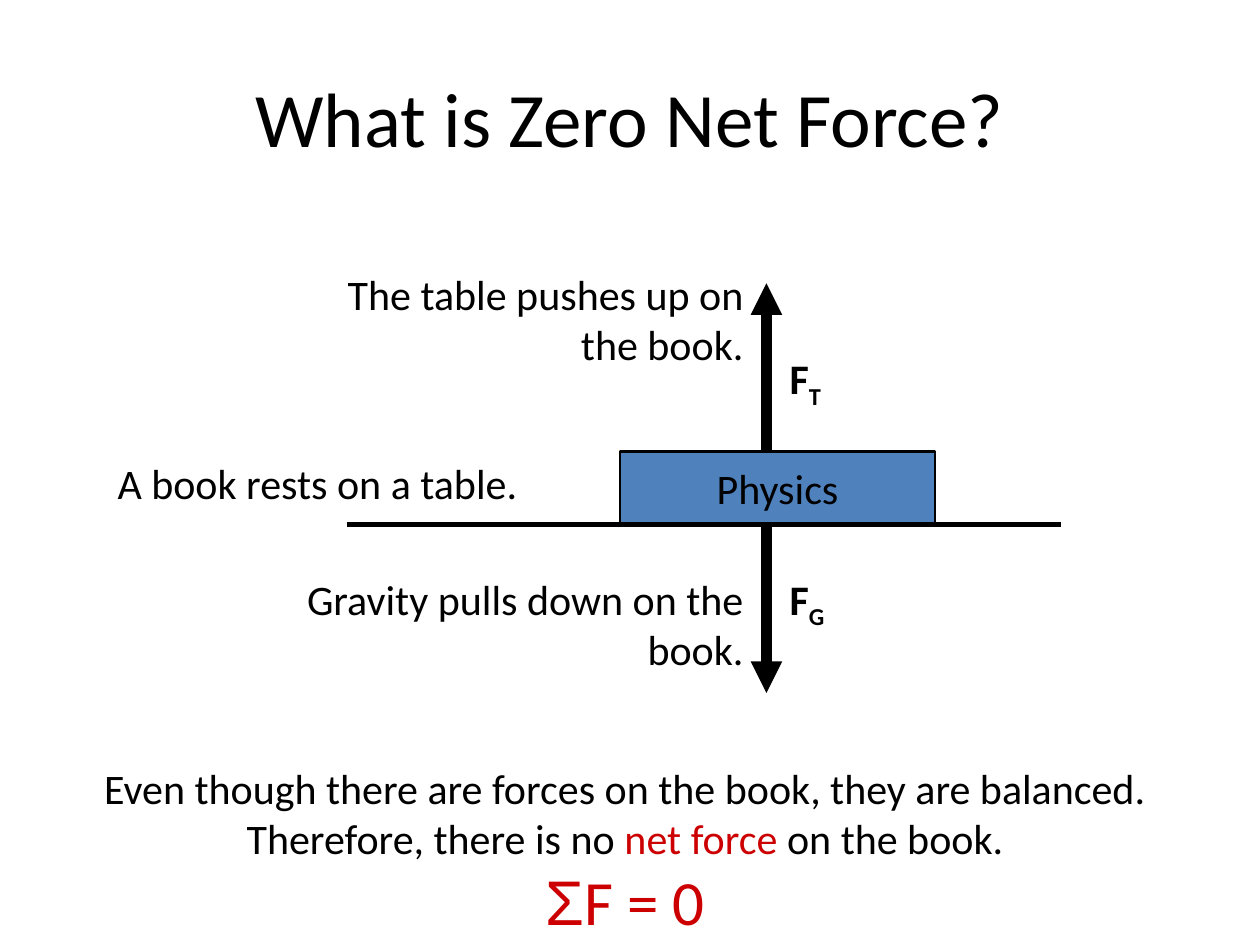
from lxml.etree import SubElement
from pptx import Presentation
from pptx.dml.color import RGBColor
from pptx.enum.shapes import MSO_CONNECTOR, MSO_SHAPE
from pptx.enum.text import MSO_ANCHOR, MSO_AUTO_SIZE, PP_ALIGN
from pptx.oxml.ns import qn
from pptx.util import Cm, Pt

BLACK = RGBColor(0, 0, 0)
RED = RGBColor(0xCC, 0, 0)
BLUE = RGBColor(0x4F, 0x81, 0xBD)
WHITE = RGBColor(255, 255, 255)


def add_run(para, text, size=24, color=BLACK, face="Calibri", bold=False):
    """Add one styled run to a paragraph and return it."""
    run = para.add_run()
    run.text = text
    font = run.font
    font.name, font.size, font.bold = face, Pt(size), bold
    font.color.rgb = color
    return run


def add_text(shapes, box, align=PP_ALIGN.LEFT, wrap=True):
    """Add a growing text box and return its first paragraph and frame."""
    frame = shapes.add_textbox(*map(Cm, box)).text_frame
    frame.word_wrap = wrap
    frame.auto_size = MSO_AUTO_SIZE.SHAPE_TO_FIT_TEXT
    para = frame.paragraphs[0]
    para.alignment = align
    return para, frame


def add_line(shapes, start, end, width, head=False):
    """Draw a straight black line, with an arrowhead at its end if asked."""
    line = shapes.add_connector(MSO_CONNECTOR.STRAIGHT, *map(Cm, start + end))
    line.line.color.rgb = BLACK
    line.line.width = Pt(width)
    if head:
        SubElement(line.line._get_or_add_ln(), qn("a:tailEnd"), type="triangle")
    SubElement(line._element.spPr, qn("a:effectLst"))


def add_title(shapes, box):
    """Place the slide title in the middle of its box."""
    para, frame = add_text(shapes, box, PP_ALIGN.CENTER)
    frame.auto_size = MSO_AUTO_SIZE.NONE
    frame.vertical_anchor = MSO_ANCHOR.MIDDLE
    add_run(para, "What is Zero Net Force?", 44)


def add_scene(shapes, box):
    """Place the book on the table, with its caption to the left."""
    x, y, w, h = box
    book = shapes.add_shape(
        MSO_SHAPE.RECTANGLE, Cm(x + 10.38), Cm(y), Cm(6.35), Cm(h))
    book.shadow.inherit = False
    book.fill.solid()
    book.fill.fore_color.rgb = BLUE
    book.line.color.rgb = BLACK
    book.line.width = Pt(1.5)
    frame = book.text_frame
    frame.word_wrap = False
    frame.vertical_anchor = MSO_ANCHOR.MIDDLE
    frame.paragraphs[0].alignment = PP_ALIGN.CENTER
    add_run(frame.paragraphs[0], "Physics")
    add_line(shapes, (x + 4.87, y + h), (x + w, y + h), 3)
    para, _ = add_text(shapes, (x, y, 9.88, 1.27), wrap=False)
    add_run(para, "A book rests on a table.")


def add_force(shapes, box, ends, note, note_y, sign, sign_y):
    """Place one force: its arrow, its note and its symbol."""
    x, y, w, h = box
    group = shapes.add_group_shape().shapes
    mid = x + 9.53
    start, end = ends
    add_line(group, (mid, y + start), (mid, y + end), 6, True)
    para, _ = add_text(group, (x, y + note_y, 9.32, 2.29), PP_ALIGN.RIGHT)
    add_run(para, note)
    para, _ = add_text(group, (x + 9.75, y + sign_y, w - 9.75, 1.27), wrap=False)
    add_run(para, "F", bold=True)
    sub = add_run(para, sign, bold=True)
    sub.font._element.set("baseline", "-25000")


def add_summary(shapes, box):
    """Place the closing statement and the formula."""
    para, frame = add_text(shapes, box, PP_ALIGN.CENTER)
    add_run(para, "Even though there are forces on the book, they are balanced.")
    para = frame.add_paragraph()
    para.alignment = PP_ALIGN.CENTER
    add_run(para, "Therefore, there is no ")
    add_run(para, "net force", color=RED)
    add_run(para, " on the book.")
    para = frame.add_paragraph()
    para.alignment = PP_ALIGN.CENTER
    add_run(para, "Σ", 36, RED, "Arial")
    add_run(para, "F = 0", 36, RED)


def main():
    """Build the slide and save it."""
    deck = Presentation()
    deck.slide_width, deck.slide_height = Cm(25.4), Cm(19.05)
    slide = deck.slides.add_slide(deck.slide_layouts[6])
    slide.background.fill.solid()
    slide.background.fill.fore_color.rgb = WHITE
    shapes = slide.shapes
    add_title(shapes, (1.27, 0.76, 22.86, 3.18))
    add_summary(shapes, (0, 15.24, 25.2, 3.81))
    add_scene(shapes, (2.12, 9.1, 19.26, 1.48))
    add_force(shapes, (5.92, 10.58, 11.17, 3.39), (0, 3.39),
              "Gravity pulls down on the book.", 0.85, "G", 0.85)
    add_force(shapes, (5.92, 5.29, 11.17, 3.81), (3.81, 0.42),
              "The table pushes up on the book.", 0, "T", 1.7)
    deck.save("out.pptx")


if __name__ == "__main__":
    main()
